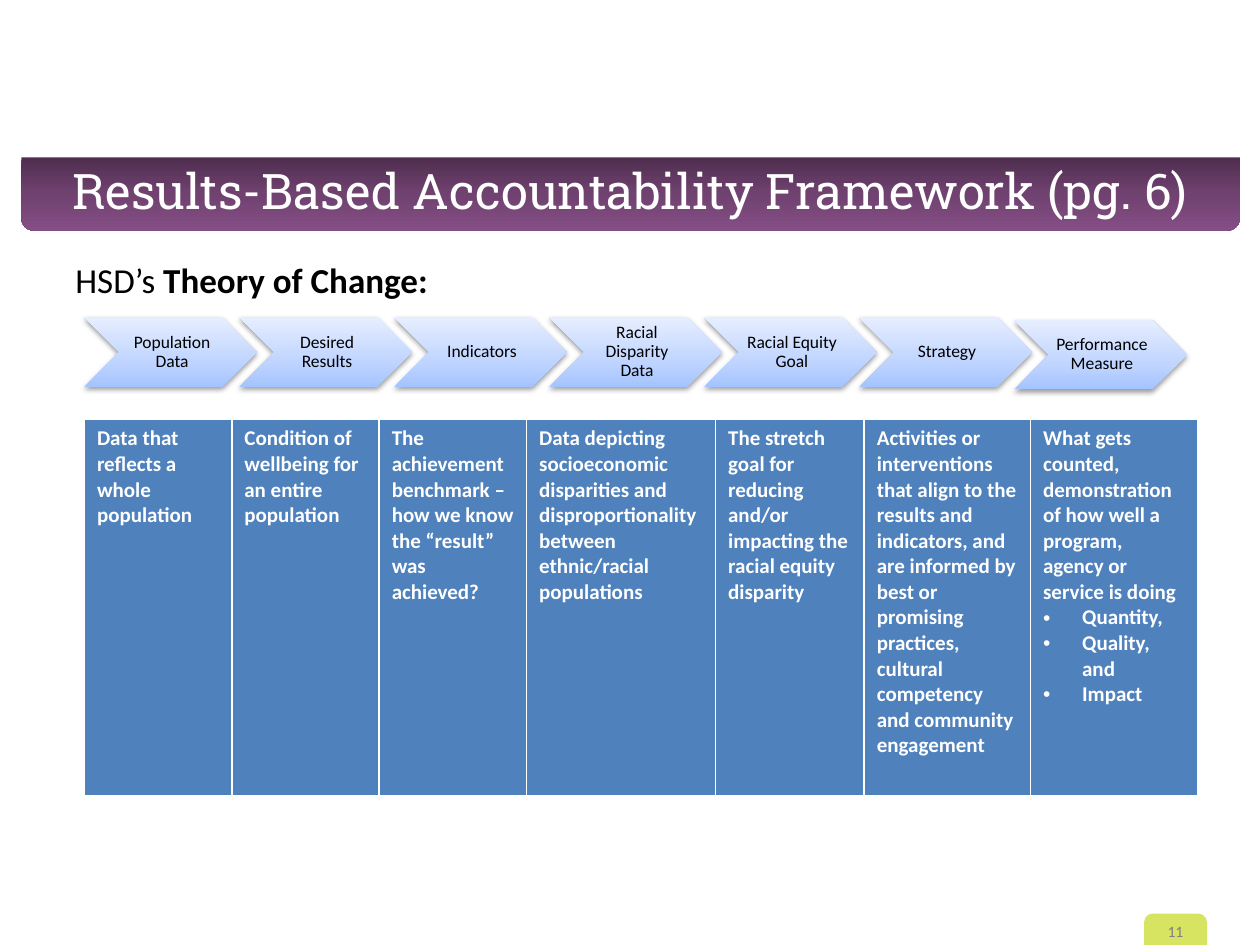
import pptx
import pptx.dml.color
import pptx.enum.shapes
import pptx.enum.text
import pptx.oxml.ns
import pptx.oxml.xmlchemy
import pptx.util
from lxml import etree
from pptx.util import Inches

COLORS = {
    "white": "FFFFFF", "black": "000000", "grey": "808080",
    "lime": "D7E462", "blue": "4F81BD",
}
BANNER_STOPS = [(0, "4F2E4F"), (50, "704270"), (100, "854E85")]
CHEVRON_STOPS = [(0, "A4C4FF"), (35, "BFD4FF"), (100, "E6EEFF")]
STEPS = ["Population Data", "Desired Results", "Indicators", "Racial Disparity Data",
         "Racial Equity Goal", "Strategy", "Performance Measure"]
COLUMN_WIDTHS = [1.17, 1.17, 1.17, 1.5, 1.18, 1.32, 1.33]
DEFINITIONS = [
    ["Data that reflects a whole population"],
    ["Condition of wellbeing for an entire population"],
    ["The achievement benchmark –how we know the “result” was achieved?"],
    ["Data depicting socioeconomic disparities and disproportionality between "
     "ethnic/racial populations"],
    ["The stretch goal for reducing and/or impacting the racial equity disparity"],
    ["Activities or interventions that align to the results and indicators, and are "
     "informed by best or promising practices, cultural competency and community engagement"],
    ["What gets counted, demonstration of how well a program, agency or service is doing",
     "Quantity,", "Quality, and", "Impact"],
]
SHAPE = pptx.enum.shapes.MSO_SHAPE
ALIGN = pptx.enum.text.PP_ALIGN
ANCHOR = pptx.enum.text.MSO_ANCHOR


def rgb(name):
    return pptx.dml.color.RGBColor.from_string(COLORS[name])


def add_element(parent, tag, **attributes):
    element = etree.SubElement(parent, pptx.oxml.ns.qn(tag))
    for key, value in attributes.items():
        element.set(key, str(value))
    return element


def set_font(paragraph, size, color, name="Calibri", bold=False):
    font = paragraph.font
    font.size = pptx.util.Pt(size)
    font.name = name
    font.bold = bold
    font.color.rgb = rgb(color)


def set_gradient(shape, stops):
    """Fill from bottom to top with any number of stops."""
    shape.fill.gradient()
    shape.fill.gradient_angle = 90
    stop_list = shape._element.spPr.find(".//" + pptx.oxml.ns.qn("a:gsLst"))
    for stop in list(stop_list):
        stop_list.remove(stop)
    for position, color in stops:
        stop = add_element(stop_list, "a:gs", pos=position * 1000)
        add_element(stop, "a:srgbClr", val=color)


def add_plain_shape(shapes, kind, left, top, width, height):
    shape = shapes.add_shape(kind, Inches(left), Inches(top), Inches(width), Inches(height))
    shape.shadow.inherit = False
    shape.line.fill.background()
    return shape


def add_text(shapes, left, top, width, height, runs, size, color, name="Calibri",
             align=ALIGN.LEFT, anchor=ANCHOR.TOP):
    """Add a one-paragraph text box; runs are (text, bold) pairs."""
    box = shapes.add_textbox(Inches(left), Inches(top), Inches(width), Inches(height))
    frame = box.text_frame
    frame.word_wrap = True
    frame.vertical_anchor = anchor
    paragraph = frame.paragraphs[0]
    paragraph.alignment = align
    set_font(paragraph, size, color, name)
    for text, bold in runs:
        run = paragraph.add_run()
        run.text = text
        if bold:
            run.font.bold = True
    return box


def add_step(shapes, left, top, label):
    chevron = add_plain_shape(shapes, SHAPE.CHEVRON, left, top, 1.37, 0.55)
    set_gradient(chevron, CHEVRON_STOPS)
    effects = chevron._element.spPr.find(pptx.oxml.ns.qn("a:effectLst"))
    shadow = add_element(effects, "a:outerShdw", blurRad=pptx.util.Pt(3.1),
                         dist=pptx.util.Pt(1.6), dir=5400000, rotWithShape=0)
    color = add_element(shadow, "a:srgbClr", val=COLORS["black"])
    add_element(color, "a:alpha", val=38000)

    box = add_text(shapes, left + 0.27, top, 0.82, 0.55, [(label, False)], 10, "black",
                   align=ALIGN.CENTER, anchor=ANCHOR.MIDDLE)
    frame = box.text_frame
    frame.margin_left = Inches(0.04)
    frame.margin_top = frame.margin_right = frame.margin_bottom = Inches(0.01)
    frame.paragraphs[0].line_spacing = 0.9


def set_borders(cell):
    properties = cell._tc.get_or_add_tcPr()
    for side, width in (("L", 1), ("R", 1), ("T", 1), ("B", 3)):
        line = add_element(properties, f"a:ln{side}", w=pptx.util.Pt(width))
        add_element(add_element(line, "a:solidFill"), "a:srgbClr", val=COLORS["white"])


def add_bullet(paragraph):
    properties = paragraph._p.get_or_add_pPr()
    properties.set("marL", str(Inches(0.31)))
    properties.set("indent", str(-Inches(0.31)))
    add_element(properties, "a:buFont", typeface="Arial")
    add_element(properties, "a:buChar", char="•")


def add_definitions(shapes):
    table = shapes.add_table(1, len(DEFINITIONS), Inches(0.67), Inches(3.33),
                             Inches(sum(COLUMN_WIDTHS)), Inches(3)).table
    for column, width in zip(table.columns, COLUMN_WIDTHS):
        column.width = Inches(width)
    for cell, lines in zip(table.rows[0].cells, DEFINITIONS):
        set_borders(cell)
        cell.fill.solid()
        cell.fill.fore_color.rgb = rgb("blue")
        cell.text = "\n".join(lines)
        for index, paragraph in enumerate(cell.text_frame.paragraphs):
            if index:
                add_bullet(paragraph)
            set_font(paragraph, 12, "white", bold=True)


def main():
    presentation = pptx.Presentation()
    presentation.slide_width = Inches(10)
    presentation.slide_height = Inches(7.5)
    shapes = presentation.slides.add_slide(presentation.slide_layouts[6]).shapes

    # Title banner, rounded at the bottom
    banner = add_plain_shape(shapes, SHAPE.ROUND_2_SAME_RECTANGLE, 0.17, 1.25, 9.67, 0.58)
    banner._element.spPr.find(pptx.oxml.ns.qn("a:xfrm")).set("flipV", "1")
    set_gradient(banner, BANNER_STOPS)

    # Page number tab
    tab = add_plain_shape(shapes, SHAPE.ROUND_2_SAME_RECTANGLE, 9.08, 7.25, 0.5, 0.42)
    tab.fill.solid()
    tab.fill.fore_color.rgb = rgb("lime")

    # Title, heading and page number
    add_text(shapes, 0.25, 1.17, 9.5, 0.67,
             [("Results-Based Accountability Framework (pg. 6)", False)], 28, "white",
             "Roboto Slab", ALIGN.CENTER, ANCHOR.MIDDLE)
    add_text(shapes, 0.5, 2, 9, 0.45, [("HSD’s ", False), ("Theory of Change:", True)],
             20, "black")
    add_text(shapes, 9.08, 7.27, 0.5, 0.4, [("11", False)], 9, "grey", align=ALIGN.CENTER)

    # Definitions below the steps
    add_definitions(shapes)

    # Chain of steps; the last one sits slightly lower
    chain = shapes.add_group_shape().shapes
    for index, label in enumerate(STEPS):
        top = 2.54 if index == len(STEPS) - 1 else 2.52
        add_step(chain, 0.67 + 1.23 * index, top, label)

    presentation.save("out.pptx")


if __name__ == "__main__":
    main()
